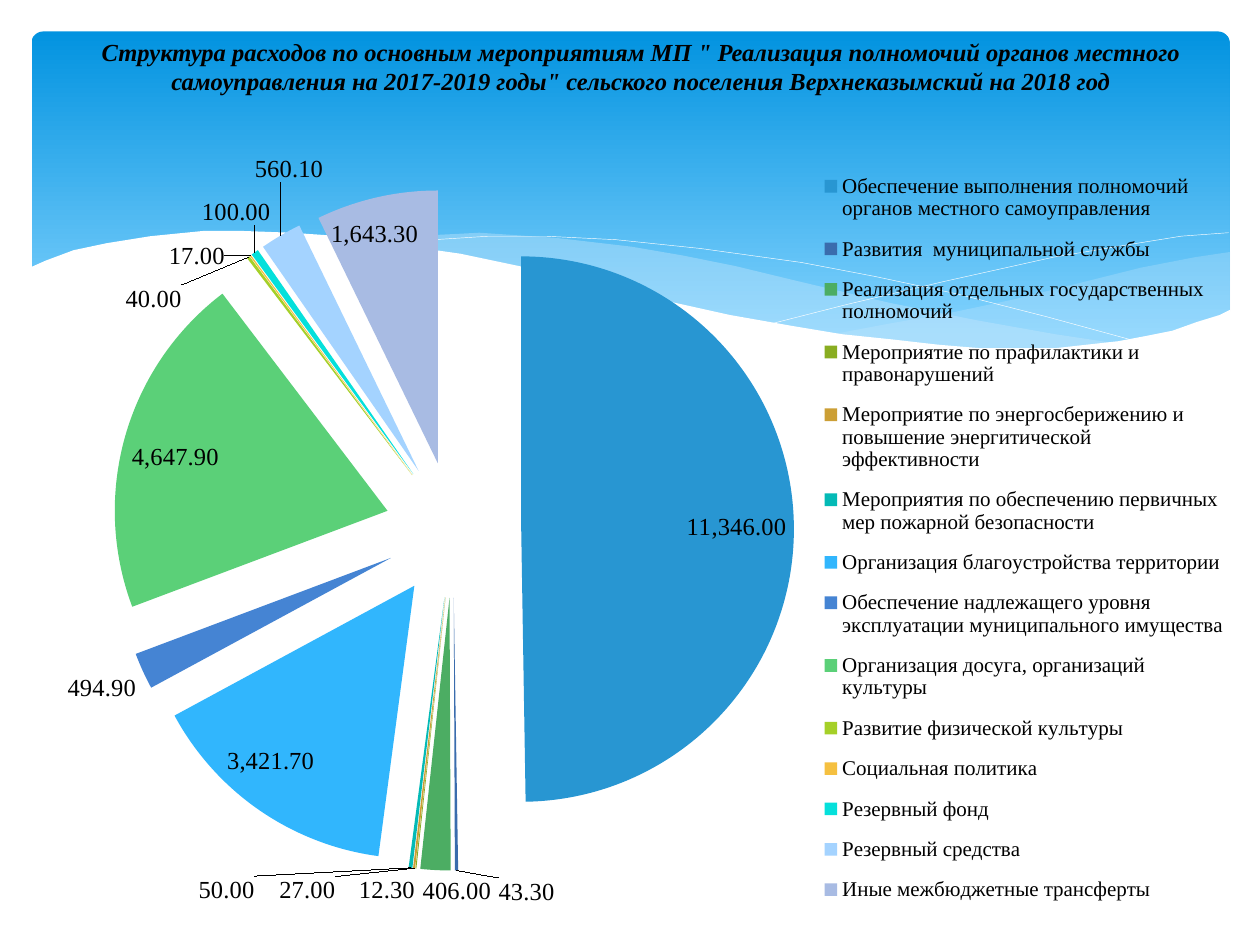
from lxml import etree
from pptx import Presentation
from pptx.chart.data import CategoryChartData
from pptx.dml.color import RGBColor
from pptx.enum.chart import XL_CHART_TYPE, XL_LABEL_POSITION, XL_LEGEND_POSITION
from pptx.enum.shapes import MSO_SHAPE
from pptx.enum.text import MSO_ANCHOR, MSO_AUTO_SIZE, PP_ALIGN
from pptx.oxml import parse_xml
from pptx.oxml.ns import nsdecls, qn
from pptx.util import Pt

BLACK = RGBColor(0, 0, 0)
WHITE = RGBColor(0xFF, 0xFF, 0xFF)
SKY_TOP = RGBColor(0x02, 0x93, 0xE0)
SKY_BOTTOM = RGBColor(0x83, 0xD3, 0xFE)
SWELL = RGBColor(0xC6, 0xE7, 0xFC)
SERIF = "Times New Roman"

TITLE = ('Структура расходов по основным мероприятиям МП " Реализация полномочий '
         'органов местного самоуправления на 2017-2019 годы" сельского поселения '
         'Верхнеказымский на 2018 год')

# Wave outlines in points
BACK_SWELL = [
    (702.7, 144), (682.6, 146.9), (652.3, 153.4), (619.9, 160.6), (579.6, 170.6),
    (542.2, 178.6), (508.3, 185), (475.9, 190.8), (497.5, 193.7), (527, 197.3),
    (553.7, 199.4), (586.1, 200.2), (614.9, 198.7), (640.1, 195.8), (663.1, 190.8),
    (683.3, 185), (702.7, 177.8)]
FRONT_SWELL = [
    (643, 196.6), (602.6, 190.8), (558, 182.9), (508.3, 172.8), (452.9, 159.8),
    (420.5, 151.9), (389.5, 146.2), (361.4, 141.1), (318.2, 136.1), (273.6, 133.2),
    (236.2, 134.6), (205.9, 137.5), (246.2, 143.3), (290.9, 151.9), (323.3, 159.8),
    (381.6, 172.8), (432.7, 183.6), (478.8, 191.5), (519.8, 197.3), (556.6, 199.4),
    (589, 200.2), (617, 199.4)]
FALLING_LINE = [
    (222.5, 140.4), (247.7, 136.8), (278.6, 134.6), (311.8, 134.6), (352.1, 136.8),
    (400.3, 141.8), (457.9, 149.8), (500.4, 157.7), (547.2, 167.8), (598.3, 180.7),
    (653, 195.8)]
RISING_LINE = [
    (441.4, 185), (483.8, 173.5), (538.6, 160.6), (601.9, 146.9), (644.4, 139.7),
    (675.4, 135.4), (702, 133.2)]
WHITE_WAVE = [
    (16.6, 153.4), (25.9, 149), (42.5, 143.3), (61.2, 139), (85.7, 134.6),
    (115.9, 132.5), (139, 132.5), (165.6, 133.2), (195.1, 135.4), (227.5, 139.7),
    (262.8, 145.4), (301, 153.4), (342, 163.4), (380.9, 172.1), (416.9, 180),
    (450.7, 185.8), (481, 190.8), (509.8, 194.4), (535.7, 197.3), (560.2, 198.7),
    (582.5, 199.4), (602.6, 198.7), (621.4, 197.3), (638.6, 195.1), (655.2, 192.2),
    (669.6, 188.6), (684, 184.3), (697, 180), (703.4, 177.1), (703.4, 236.9),
    (16.6, 236.9)]

IN, OUT = XL_LABEL_POSITION.INSIDE_END, XL_LABEL_POSITION.OUTSIDE_END
# Category, value, colour, label position, label shift in points
EXPENSES = [
    ("Обеспечение выполнения полномочий органов местного самоуправления", 11346, "2896D2", IN, None),
    ("Развития  муниципальной службы", 43.3, "3A6CAD", OUT, (40, 0)),
    ("Реализация отдельных государственных полномочий", 406, "4CAD63", OUT, (12.5, 0)),
    ("Мероприятие по прафилактики и правонарушений", 12.3, "89AD21", OUT, None),
    ("Мероприятие по энергосберижению и повышение энергитической эффективности", 27, "CC9F35", OUT, (-44.5, 0.5)),
    ("Мероприятия по обеспечению первичных мер пожарной безопасности", 50, "04BAB6", OUT, (-88.5, 0.5)),
    ("Организация благоустройства территории", 3421.7, "31B6FD", IN, (-21, -17)),
    ("Обеспечение надлежащего уровня эксплуатации муниципального имущества", 494.9, "4584D3", OUT, None),
    ("Организация досуга, организаций культуры", 4647.9, "5BD078", IN, (-0.5, 3.5)),
    ("Развитие физической культуры", 40, "A5D028", OUT, (-35.5, 35)),
    ("Социальная политика", 17, "F5C040", OUT, (-12, 11.5)),
    ("Резервный фонд", 100, "05E0DB", OUT, (11.5, -12)),
    ("Резервный средства", 560.1, "A4D3FF", OUT, (26.5, -26.5)),
    ("Иные межбюджетные трансферты", 1643.3, "A8BBE3", IN, (-27, 9)),
]


def set_font(font, **values):
    font.color.rgb = BLACK
    for name, value in values.items():
        setattr(font, name, value)


def add_wave(s, points, fill=None, opacity=100):
    """A filled wave, or a thin white line when there is no fill."""
    fb = s.shapes.build_freeform(*points[0], scale=Pt(1))
    fb.add_line_segments(points[1:], close=fill is not None)
    sp = fb.convert_to_shape()
    sp.shadow.inherit = False
    if fill is None:
        sp.fill.background()
        sp.line.color.rgb = WHITE
        sp.line.width = Pt(0.25)
        return
    sp.line.fill.background()
    sp.fill.solid()
    sp.fill.fore_color.rgb = fill
    if opacity < 100:
        color = sp.fill._xPr.find(".//" + qn("a:srgbClr"))
        etree.SubElement(color, qn("a:alpha"), val=str(opacity * 1000))


def add_backdrop(s, x, y, w, h):
    # Blue sky panel
    sp = s.shapes.add_shape(MSO_SHAPE.ROUNDED_RECTANGLE, Pt(x), Pt(y), Pt(w), Pt(h))
    sp.adjustments[0] = 0.034
    sp.shadow.inherit = False
    sp.line.fill.background()
    sp.fill.gradient()
    sp.fill.gradient_angle = 270
    for stop, color, position in zip(sp.fill.gradient_stops, (SKY_TOP, SKY_BOTTOM), (0, 0.9)):
        stop.color.rgb = color
        stop.position = position
    # Waves
    add_wave(s, BACK_SWELL, SWELL, 29)
    add_wave(s, FRONT_SWELL, SWELL, 40)
    add_wave(s, FALLING_LINE)
    add_wave(s, RISING_LINE)
    add_wave(s, WHITE_WAVE, WHITE)


def place_title(s, x, y, w, h):
    sp = s.shapes.title
    sp.left, sp.top, sp.width, sp.height = Pt(x), Pt(y), Pt(w), Pt(h)
    sp._element.getparent().append(sp._element)  # in front of the backdrop
    tf = sp.text_frame
    tf.auto_size = MSO_AUTO_SIZE.NONE
    tf.word_wrap = True
    tf.vertical_anchor = MSO_ANCHOR.TOP
    tf.margin_top = tf.margin_bottom = 0
    p = tf.paragraphs[0]
    p.alignment = PP_ALIGN.CENTER
    r = p.add_run()
    r.text = TITLE
    set_font(r.font, name=SERIF, size=Pt(14), bold=True, italic=True)


def manual_layout(x, y, w=None, h=None, inner=False):
    """A c:layout in shares of the chart; without a size it is a shift."""
    parts = [("layoutTarget", "inner")] if inner else []
    if w is not None:
        parts += [("xMode", "edge"), ("yMode", "edge")]
    parts += [("x", x), ("y", y)]
    if w is not None:
        parts += [("w", w), ("h", h)]
    body = "".join(f'<c:{tag} val="{val}"/>' for tag, val in parts)
    return parse_xml(f'<c:layout {nsdecls("c")}><c:manualLayout>{body}</c:manualLayout></c:layout>')


def replace_layout(parent, layout, index):
    for old in parent.findall(qn("c:layout")):
        parent.remove(old)
    parent.insert(index, layout)


def add_expense_pie(s, x, y, w, h):
    data = CategoryChartData(number_format="#,##0.00")
    data.categories = [row[0] for row in EXPENSES]
    data.add_series("Series 1", [row[1] for row in EXPENSES])
    chart = s.shapes.add_chart(XL_CHART_TYPE.PIE, Pt(x), Pt(y), Pt(w), Pt(h), data).chart
    chart.has_title = False
    set_font(chart.font, name="Calibri", size=Pt(10))
    plot_area = chart._chartSpace.chart.plotArea
    replace_layout(plot_area, manual_layout(0.064, 0.068, 0.568, 0.859, inner=True), 0)

    # Legend
    chart.has_legend = True
    legend = chart.legend
    legend.position = XL_LEGEND_POSITION.RIGHT
    legend.include_in_layout = False
    set_font(legend.font, name=SERIF, size=Pt(12))
    replace_layout(legend._element, manual_layout(0.656, 0.028, 0.335, 0.96), 1)

    # Value labels
    series = chart.plots[0].series[0]
    labels = series.data_labels
    labels.show_value = True
    labels.number_format = "#,##0.00"
    labels.number_format_is_linked = False
    set_font(labels.font, name=SERIF, size=Pt(14))

    # Slices
    for i, (_, _, color, position, shift) in enumerate(EXPENSES):
        point = series.points[i]
        point.format.fill.solid()
        point.format.fill.fore_color.rgb = RGBColor.from_string(color)
        label = point.data_label
        set_font(label.font, name=SERIF, size=Pt(14))
        label.position = position
        if shift:
            label._dLbl.insert(1, manual_layout(shift[0] / w, shift[1] / h))
    first_point = series._element.find(qn("c:dPt"))
    first_point.addprevious(parse_xml(f'<c:explosion {nsdecls("c")} val="25"/>'))


def main():
    prs = Presentation()
    prs.slide_width, prs.slide_height = Pt(720), Pt(540)
    s = prs.slides.add_slide(prs.slide_layouts[5])
    add_backdrop(s, 18, 18, 684.72, 194.4)
    place_title(s, 42.48, 20.88, 648, 51.12)
    add_expense_pie(s, 20.16, 77.04, 686.16, 453.6)
    prs.save("out.pptx")


if __name__ == "__main__":
    main()
